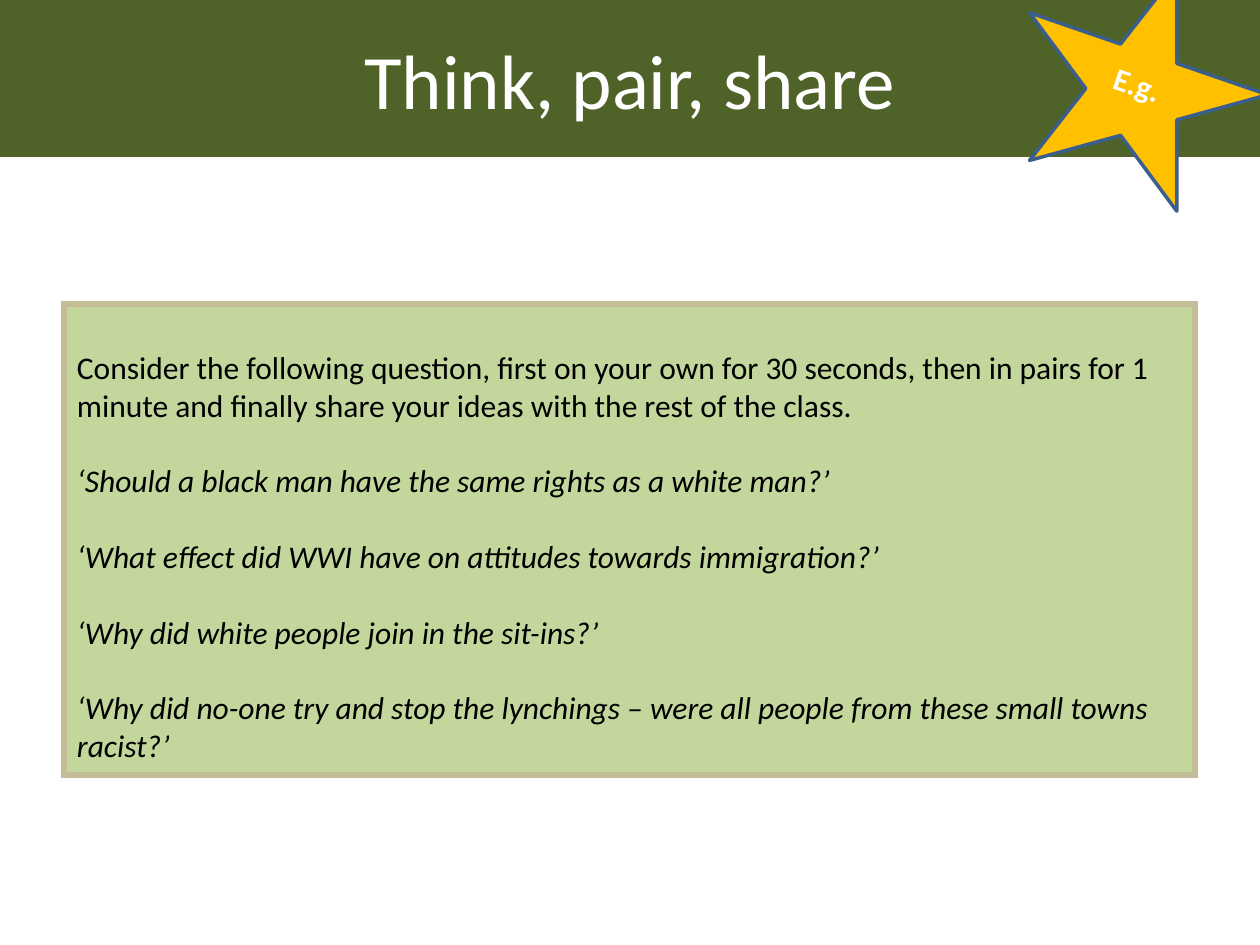
import dataclasses

import pptx
import pptx.dml.color
import pptx.enum.shapes
import pptx.enum.text
import pptx.oxml.ns
import pptx.util
from lxml import etree

ALIGN = pptx.enum.text.PP_ALIGN
ANCHOR = pptx.enum.text.MSO_ANCHOR
SHAPE = pptx.enum.shapes.MSO_SHAPE


@dataclasses.dataclass(frozen=True)
class Theme:
    font: str = "Calibri"
    banner: str = "4F6228"
    panel: str = "C3D69B"
    panel_edge: str = "C4BD97"
    star: str = "FFC000"
    star_edge: str = "3A5F8C"
    light: str = "FFFFFF"
    dark: str = "000000"
    title_size: int = 44
    text_size: int = 18
    question_gap: float = 21.6


def px(length):
    return pptx.util.Emu(round(length * 914400 / 126))


def rgb(value):
    return pptx.dml.color.RGBColor.from_string(value)


class SlideBuilder:
    def __init__(self, slide, theme):
        self.slide = slide
        self.theme = theme

    def place(self, shape, box, fill, edge=None, edge_width=0):
        shape.left, shape.top, shape.width, shape.height = map(px, box)
        shape.fill.solid()
        shape.fill.fore_color.rgb = rgb(fill)
        if edge:
            shape.line.color.rgb = rgb(edge)
            shape.line.width = pptx.util.Pt(edge_width)
        else:
            shape.line.fill.background()

    def frame(self, shape, anchor, wrap=True):
        frame = shape.text_frame
        frame.word_wrap = wrap
        frame.auto_size = pptx.enum.text.MSO_AUTO_SIZE.NONE
        frame.vertical_anchor = anchor
        frame.margin_left = frame.margin_right = px(13)
        frame.margin_top = frame.margin_bottom = px(6)
        return frame

    def add_run(self, paragraph, text, size, color, bold=False, italic=False):
        run = paragraph.add_run()
        run.text = text
        run.font.name = self.theme.font
        run.font.size = pptx.util.Pt(size)
        run.font.color.rgb = rgb(color)
        run.font.bold = bold
        run.font.italic = italic

    def half_line_before(self, paragraph):
        paragraph.space_before = pptx.util.Pt(0)
        spacing = paragraph._p.pPr.find(pptx.oxml.ns.qn("a:spcBef"))
        spacing.remove(spacing[0])
        etree.SubElement(spacing, pptx.oxml.ns.qn("a:spcPct"), val="50000")

    def title(self, text, box):
        shape = self.slide.shapes.title
        self.place(shape, box, self.theme.banner)
        paragraph = self.frame(shape, ANCHOR.MIDDLE).paragraphs[0]
        paragraph.alignment = ALIGN.CENTER
        self.half_line_before(paragraph)
        self.add_run(paragraph, text, self.theme.title_size, self.theme.light)

    def question_panel(self, instruction, questions, box):
        shape = self.slide.placeholders[1]
        self.place(shape, box, self.theme.panel, self.theme.panel_edge, 3)
        # Square corners on the panel edge
        outline = shape._element.spPr.find(pptx.oxml.ns.qn("a:ln"))
        etree.SubElement(outline, pptx.oxml.ns.qn("a:miter"), lim="800000")
        frame = self.frame(shape, ANCHOR.TOP)
        frame.margin_top = px(44)
        for index, text in enumerate([instruction, *questions]):
            paragraph = frame.paragraphs[0] if index == 0 else frame.add_paragraph()
            paragraph.alignment = ALIGN.LEFT
            gap = self.theme.question_gap if index else 0
            paragraph.space_before = pptx.util.Pt(gap)
            properties = paragraph._p.get_or_add_pPr()
            properties.set("marL", "0")
            properties.set("indent", "0")
            etree.SubElement(properties, pptx.oxml.ns.qn("a:buNone"))
            self.add_run(paragraph, text, self.theme.text_size, self.theme.dark,
                         italic=index > 0)

    def star_badge(self, text, star_box, label_box, rotation):
        group = self.slide.shapes.add_group_shape()
        star = group.shapes.add_shape(SHAPE.STAR_5_POINT, *map(px, star_box))
        self.place(star, star_box, self.theme.star, self.theme.star_edge, 2)
        label = group.shapes.add_shape(SHAPE.RECTANGLE, *map(px, label_box))
        self.place(label, label_box, self.theme.star)
        for shape in (star, label):
            shape.shadow.inherit = False
            shape.rotation = rotation
        paragraph = self.frame(label, ANCHOR.TOP, wrap=False).paragraphs[0]
        paragraph.alignment = ALIGN.RIGHT
        self.half_line_before(paragraph)
        self.add_run(paragraph, text, self.theme.text_size, self.theme.light, bold=True)


def main():
    presentation = pptx.Presentation()
    presentation.slide_width, presentation.slide_height = px(1260), px(945)
    slide = presentation.slides.add_slide(presentation.slide_layouts[1])
    builder = SlideBuilder(slide, Theme())

    # Discussion panel
    builder.question_panel(
        "Consider the following question, first on your own for 30 seconds, "
        "then in pairs for 1 minute and finally share your ideas with the rest "
        "of the class.",
        [
            "‘Should a black man have the same rights as a white man?’",
            "‘What effect did WWI have on attitudes towards immigration?’",
            "‘Why did white people join in the sit-ins?’",
            "‘Why did no-one try and stop the lynchings – were all people from "
            "these small towns racist?’",
        ],
        (64, 304, 1131, 471),
    )

    # Title banner
    builder.title("Think, pair, share", (0, 0, 1260, 157))

    # Tilted star with its label
    builder.star_badge("E.g.", (1014, -34, 252, 226), (1101, 59, 73, 52), 19)

    presentation.save("out.pptx")


if __name__ == "__main__":
    main()
